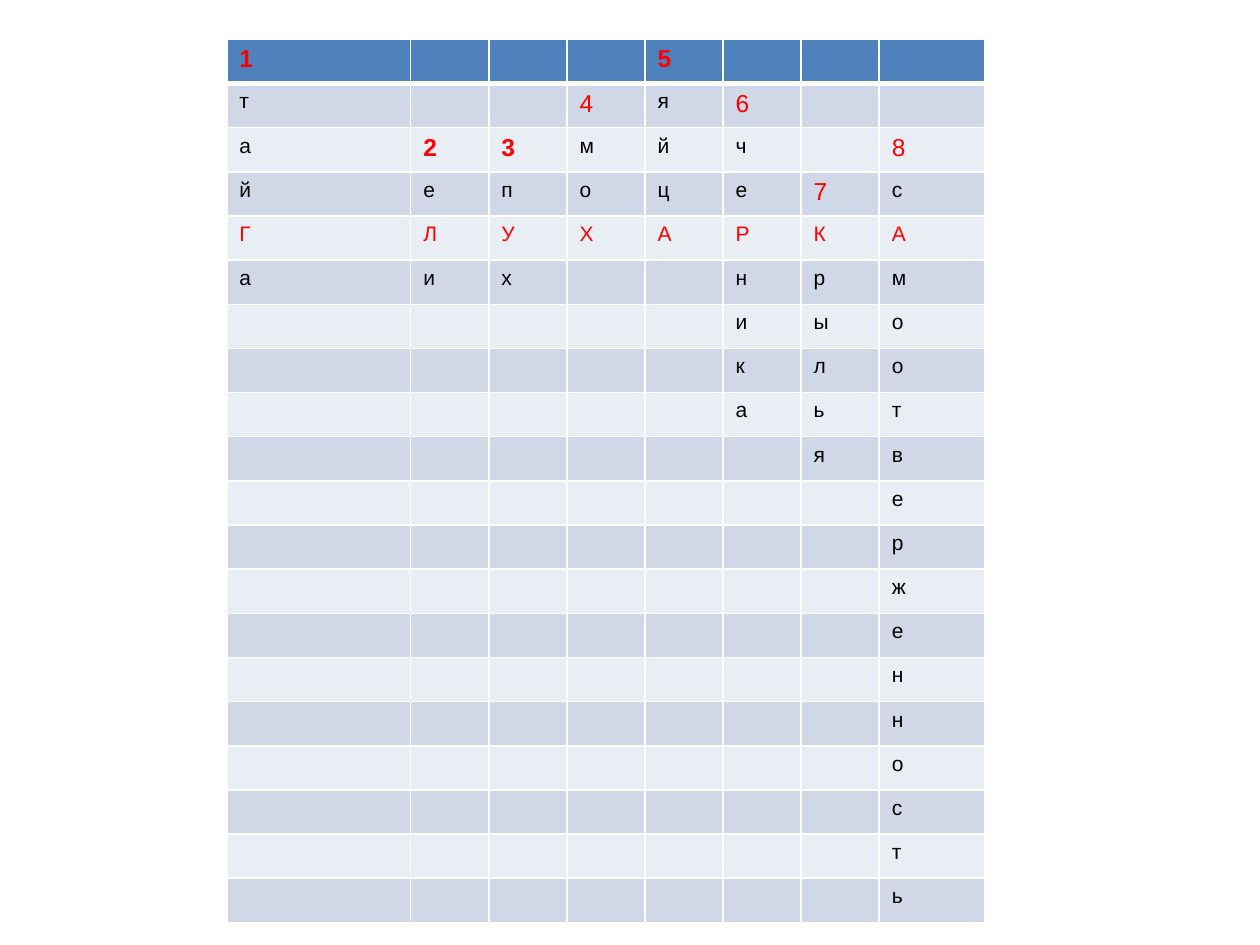
from dataclasses import dataclass

from lxml.etree import SubElement
from pptx import Presentation
from pptx.dml.color import RGBColor
from pptx.oxml.ns import qn
from pptx.util import Pt


@dataclass(frozen=True)
class Theme:
    font: str = "Arial"
    head: str = "4F81BD"
    dark: str = "D0D8E8"
    light: str = "E9EDF4"
    line: str = "FFFFFF"
    text: str = "000000"
    mark: str = "FF0000"
    clue: int = 14
    letter: int = 12


THEME = Theme()
ROWS = 20
HEIGHT = 25.24
WIDTHS = [105.12] + [44.64] * 6 + [60.48]
BOLD = "1235"
# Row of the clue number, then the number and the word below it.
# Capitals spell the key word across the grid.
WORDS = [
    (0, "1тайГа"),
    (2, "2еЛи"),
    (2, "3пУх"),
    (1, "4моХ"),
    (0, "5яйцА"),
    (1, "6чеРника"),
    (3, "7Крылья"),
    (2, "8сАмоотверженность"),
]


def draw_edges(cell, foot):
    """Line all four sides, with foot as the width of the lower one."""
    props = cell._tc.get_or_add_tcPr()
    for side, width in (("L", 1), ("R", 1), ("T", 1), ("B", foot)):
        line = SubElement(props, qn(f"a:ln{side}"), w=str(Pt(width)))
        fill = SubElement(line, qn("a:solidFill"))
        SubElement(fill, qn("a:srgbClr"), val=THEME.line)


def paint(cell, row):
    draw_edges(cell, 1 if row else 3)
    shade = THEME.dark if row % 2 else THEME.light
    cell.fill.solid()
    cell.fill.fore_color.rgb = RGBColor.from_string(shade if row else THEME.head)


def write(cell, sign):
    para = cell.text_frame.paragraphs[0]
    size = Pt(THEME.clue if sign.isdigit() else THEME.letter)
    if sign:
        para.text = sign
    else:
        # An empty cell needs a small end mark to keep its row low.
        SubElement(para._p, qn("a:endParaRPr"), sz=str(THEME.letter * 100))
    red = sign.isdigit() or sign.isupper()
    font = para.font
    font.name = THEME.font
    font.size = size
    font.bold = sign != "" and sign in BOLD
    font.color.rgb = RGBColor.from_string(THEME.mark if red else THEME.text)


def add_grid(slide):
    frame = slide.shapes.add_table(
        ROWS, len(WORDS), Pt(129.6), Pt(22.5), Pt(sum(WIDTHS)), Pt(ROWS * HEIGHT)
    )
    grid = frame.table
    for row in grid.rows:
        row.height = Pt(HEIGHT)
    for col, (start, word) in enumerate(WORDS):
        grid.columns[col].width = Pt(WIDTHS[col])
        signs = [""] * start + list(word)
        signs += [""] * (ROWS - len(signs))
        for row, sign in enumerate(signs):
            cell = grid.cell(row, col)
            paint(cell, row)
            write(cell, sign)


def main():
    deck = Presentation()
    deck.slide_width, deck.slide_height = Pt(720), Pt(540)
    add_grid(deck.slides.add_slide(deck.slide_layouts[6]))
    deck.save("out.pptx")


if __name__ == "__main__":
    main()
